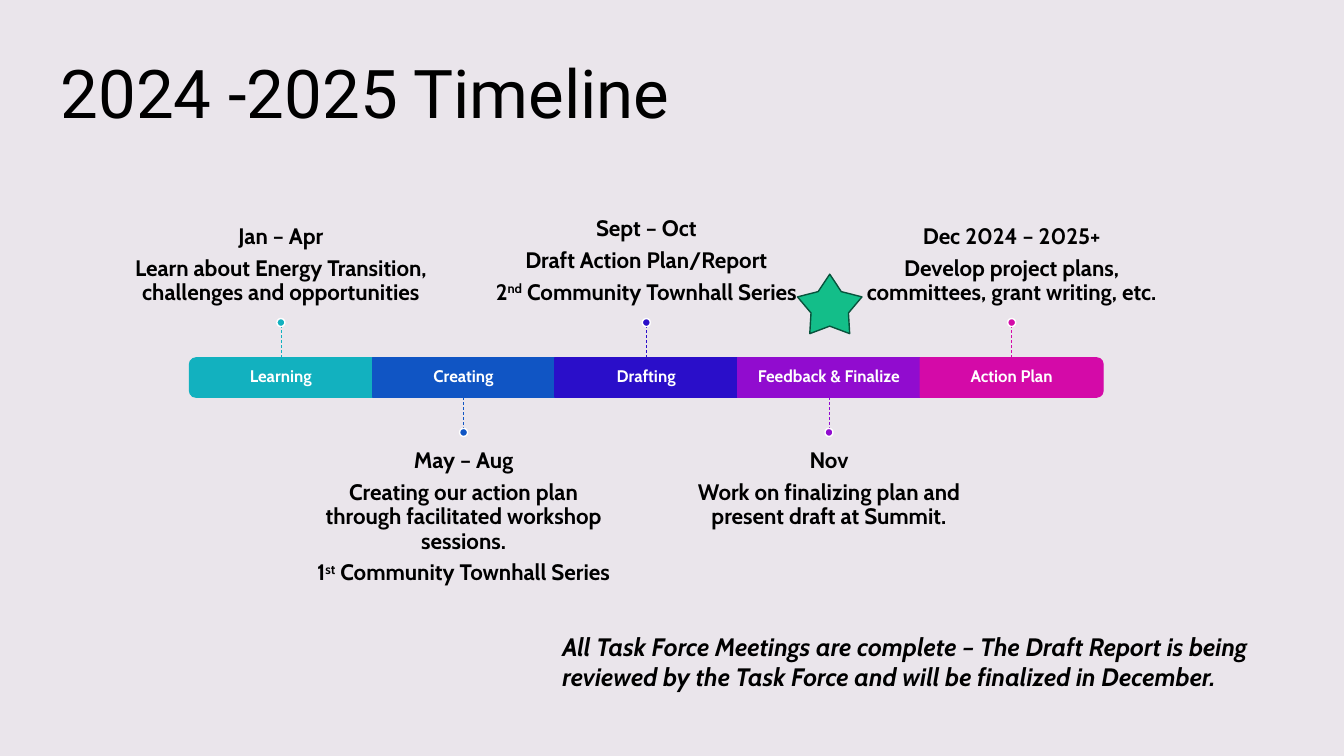
"""Build the 2024-2025 timeline slide."""
from lxml.etree import SubElement
from pptx import Presentation
from pptx.dml.color import RGBColor
from pptx.enum.dml import MSO_LINE
from pptx.enum.shapes import MSO_CONNECTOR, MSO_SHAPE
from pptx.enum.text import MSO_ANCHOR, PP_ALIGN
from pptx.oxml.ns import qn
from pptx.util import Inches, Pt

COLORS = {
    "background": "EAE5EB", "ink": "000000", "white": "FFFFFF",
    "Learning": "12B1BF", "Creating": "1055C4", "Drafting": "2A0EC9",
    "Feedback & Finalize": "910CCF", "Action Plan": "D40AA8",
    "star": "13BE89", "star edge": "08533C",
}
HEADING = "2024 -2025 Timeline"
PHASES = [
    ("Learning", [["Jan – Apr"],
                  ["Learn about Energy Transition, challenges and opportunities"]]),
    ("Creating", [["May – Aug"],
                  ["Creating our action plan through facilitated workshop sessions."],
                  ["1", "st", " Community Townhall Series"]]),
    ("Drafting", [["Sept – Oct"], ["Draft Action Plan/Report"],
                  ["2", "nd", " Community Townhall Series"]]),
    ("Feedback & Finalize", [["Nov"],
                             ["Work on finalizing plan and present draft at Summit."]]),
    ("Action Plan", [["Dec 2024 – 2025+"],
                     ["Develop project plans, committees, grant writing, etc."]]),
]
STATUS = ("All Task Force Meetings are complete – The Draft Report is being "
          "reviewed by the Task Force and will be finalized in December.")
ORDINALS = ("st", "nd")

SLIDE_W, SLIDE_H = 13.33, 7.5
MARGIN = 0.6
BAND_LEFT, BAND_TOP, BAND_W, BAND_H = 1.88, 3.55, 9.06, 0.39
COLUMN = BAND_W / len(PHASES)
STEM, DOT = 0.31, 0.08
NOTE_W, NOTE_H, NOTE_GAP = COLUMN * 5 / 3, 1.37, 0.13


def color(key):
    return RGBColor.from_string(COLORS[key])


def write(frame, paragraphs, size, ink="ink", font="Cabin", bold=True, italic=False,
          align=PP_ALIGN.CENTER, anchor=MSO_ANCHOR.TOP, insets=(0, 0, 0, 0),
          spacing=0.9, after=5.5):
    frame.word_wrap = True
    frame.vertical_anchor = anchor
    (frame.margin_left, frame.margin_top,
     frame.margin_right, frame.margin_bottom) = map(Inches, insets)
    for index, pieces in enumerate(paragraphs):
        paragraph = frame.add_paragraph() if index else frame.paragraphs[0]
        paragraph.alignment = align
        paragraph.line_spacing = spacing
        paragraph.space_before = Pt(0)
        paragraph.space_after = Pt(after)
        for piece in pieces:
            run = paragraph.add_run()
            run.text = piece
            run.font.name, run.font.size = font, Pt(size)
            run.font.bold, run.font.italic = bold, italic
            run.font.color.rgb = color(ink)
            if piece in ORDINALS:
                run._r.get_or_add_rPr().set("baseline", "30000")


def add_text(slide, box, paragraphs, size, **style):
    frame = slide.shapes.add_textbox(*map(Inches, box)).text_frame
    write(frame, paragraphs, size, **style)


def add_figure(slide, kind, box, fill, edge):
    figure = slide.shapes.add_shape(kind, *map(Inches, box))
    figure.shadow.inherit = False
    figure.fill.solid()
    figure.fill.fore_color.rgb = color(fill)
    figure.line.color.rgb = color(edge)
    figure.line.width = Pt(1)
    return figure


def add_bar(slide, phase, left, rotation):
    if rotation is None:
        return add_figure(slide, MSO_SHAPE.RECTANGLE,
                          (left, BAND_TOP, COLUMN, BAND_H), phase, phase)
    inset = (COLUMN - BAND_H) / 2
    bar = add_figure(slide, MSO_SHAPE.ROUND_2_SAME_RECTANGLE,
                     (left + inset, BAND_TOP - inset, BAND_H, COLUMN), phase, phase)
    bar.rotation = rotation
    return bar


def add_stem(slide, phase, center, start, end):
    stem = slide.shapes.add_connector(
        MSO_CONNECTOR.STRAIGHT, *map(Inches, (center, start, center, end)))
    stem.line.color.rgb = color(phase)
    stem.line.width = Pt(0.5)
    stem.line.dash_style = MSO_LINE.DASH
    SubElement(stem._element.spPr, qn("a:effectLst"))
    return stem


def add_phase(slide, index, phase, note):
    left = BAND_LEFT + index * COLUMN
    center = left + COLUMN / 2
    above = index % 2 == 0
    rotation = {0: 270, len(PHASES) - 1: 90}.get(index)
    bar = add_bar(slide, phase, left, rotation)
    add_text(slide, (left, BAND_TOP, COLUMN, BAND_H), [[phase]], 12, ink="white",
             anchor=MSO_ANCHOR.MIDDLE, insets=(0.1,) * 4, after=0)

    direction = -1 if above else 1
    start = BAND_TOP if above else BAND_TOP + BAND_H
    end = start + direction * STEM
    edge = end + direction * DOT
    note_top = edge - NOTE_H if above else edge
    add_text(slide, (center - NOTE_W / 2, note_top, NOTE_W, NOTE_H), note, 16,
             anchor=MSO_ANCHOR.BOTTOM if above else MSO_ANCHOR.TOP,
             insets=(0, 0, 0, NOTE_GAP) if above else (0, NOTE_GAP, 0, 0))
    stem = add_stem(slide, phase, center, start, end)
    if rotation is None:
        stem.begin_connect(bar, 0 if above else 2)
    add_figure(slide, MSO_SHAPE.OVAL,
               (center - DOT / 2, min(end, edge), DOT, DOT), phase, "white")


def main():
    deck = Presentation()
    deck.slide_width, deck.slide_height = Inches(SLIDE_W), Inches(SLIDE_H)
    slide = deck.slides.add_slide(deck.slide_layouts[5])
    slide.background.fill.solid()
    slide.background.fill.fore_color.rgb = color("background")

    title = slide.shapes.title
    title.left, title.top, title.width, title.height = map(
        Inches, (MARGIN, MARGIN, SLIDE_W - 2 * MARGIN, 1.46))
    write(title.text_frame, [[HEADING]], 48, font="Roboto", bold=False,
          align=PP_ALIGN.LEFT, after=0)

    for index, (phase, note) in enumerate(PHASES):
        add_phase(slide, index, phase, note)

    star = add_figure(slide, MSO_SHAPE.STAR_5_POINT, (7.91, 2.72, 0.64, 0.59),
                      "star", "star edge")
    star.adjustments[0] = 0.29
    add_text(slide, (5.48, 6.21, 7.57, 0.71), [[STATUS]], 18, italic=True,
             align=PP_ALIGN.LEFT, insets=(0.1, 0.05, 0.1, 0.05), spacing=1.0, after=0)
    deck.save("out.pptx")


if __name__ == "__main__":
    main()
